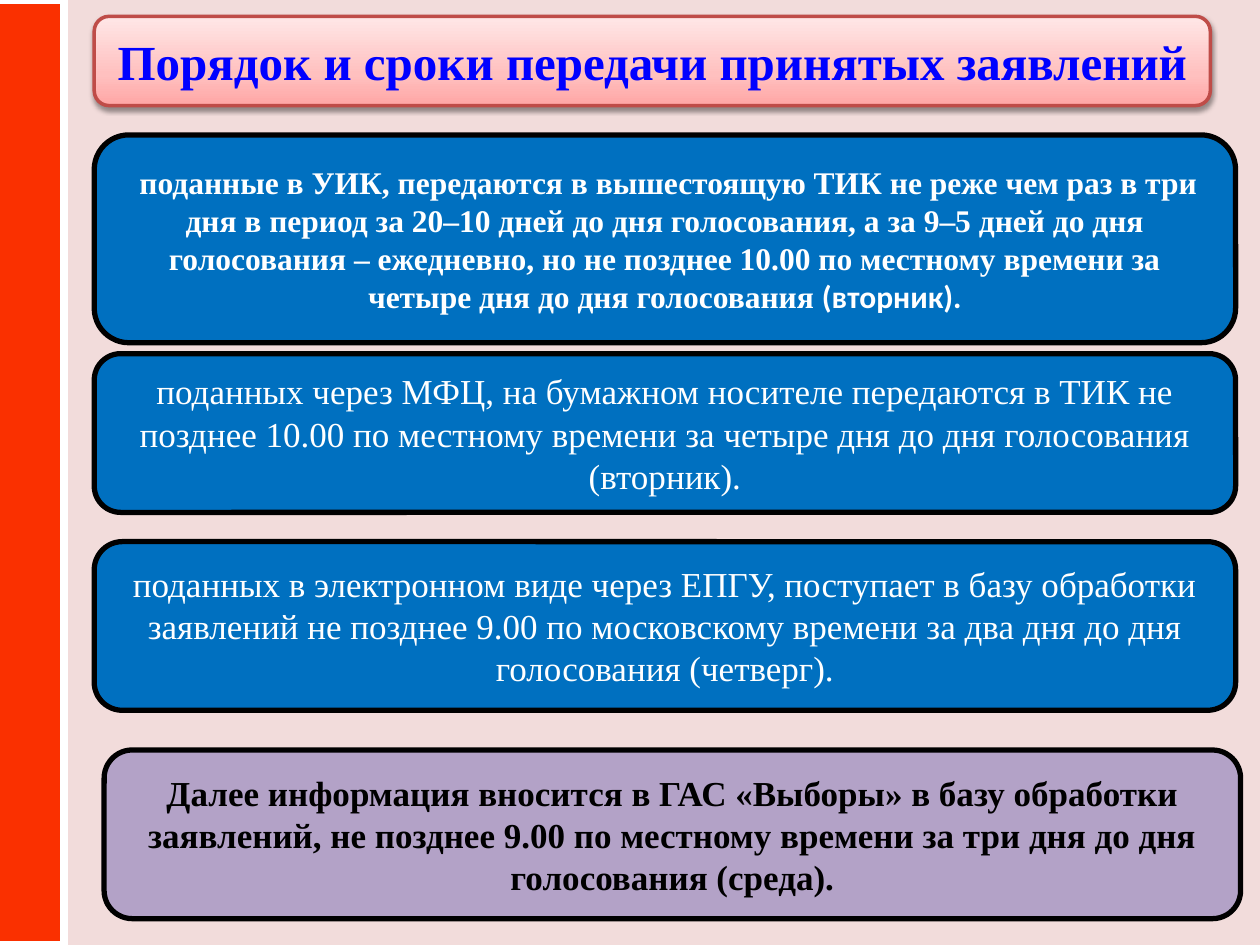
"""Build the slide on the order and deadlines for passing on accepted applications."""
from lxml import etree
from pptx import Presentation
from pptx.dml.color import RGBColor
from pptx.enum.shapes import MSO_SHAPE as SHAPE
from pptx.enum.text import MSO_ANCHOR as ANCHOR, PP_ALIGN as ALIGN
from pptx.oxml.ns import qn
from pptx.util import Cm, Pt

PINK = RGBColor(0xF2, 0xDC, 0xDB)
RED = RGBColor(0xFA, 0x30, 0x00)
BRICK = RGBColor(0xBF, 0x4C, 0x48)
BLUE = RGBColor(0x00, 0x70, 0xC0)
TITLE_BLUE = RGBColor(0x00, 0x00, 0xFF)
LILAC = RGBColor(0xB3, 0xA2, 0xC7)
WHITE = RGBColor(0xFF, 0xFF, 0xFF)
BLACK = RGBColor(0x00, 0x00, 0x00)
SERIF, SANS = "Times New Roman", "Calibri"
TITLE_STOPS = [(0, "FFA6A5"), (35000, "FFC0BF"), (100000, "FFE7E7")]


def add_panel(preset, left, top, width, height, fill, line, line_width):
    panel = slide.shapes.add_shape(preset, Cm(left), Cm(top), Cm(width), Cm(height))
    panel.shadow.inherit = False
    panel.fill.solid()
    panel.fill.fore_color.rgb = fill
    panel.line.color.rgb = line
    panel.line.width = Pt(line_width)
    return panel


def add_text(panel, runs, size, color, bold):
    frame = panel.text_frame
    frame.word_wrap = True
    frame.vertical_anchor = ANCHOR.MIDDLE
    paragraph = frame.paragraphs[0]
    paragraph.alignment = ALIGN.CENTER
    for words, font_name in runs:
        run = paragraph.add_run()
        run.text = words
        run.font.name = font_name
        run.font.size = Pt(size)
        run.font.bold = bold
        run.font.color.rgb = color


deck = Presentation()
deck.slide_width, deck.slide_height = Cm(25.4), Cm(19.05)
slide = deck.slides.add_slide(deck.slide_layouts[6])
slide.background.fill.solid()
slide.background.fill.fore_color.rgb = PINK

title = add_panel(SHAPE.ROUNDED_RECTANGLE, 1.9, 0.33, 22.5, 1.8, PINK, BRICK, 2)
title.fill.gradient()
title.fill.gradient_angle = 90
stop_list = title._element.spPr.find(qn("a:gradFill")).find(qn("a:gsLst"))
for stop in list(stop_list):
    stop_list.remove(stop)
for position, shade in TITLE_STOPS:
    stop = etree.SubElement(stop_list, qn("a:gs"), pos=str(position))
    etree.SubElement(stop, qn("a:srgbClr"), val=shade)
effects = title._element.spPr.find(qn("a:effectLst"))
shadow = etree.SubElement(effects, qn("a:outerShdw"), blurRad=str(Pt(3.1)),
                          dist=str(Pt(1.6)), dir="5400000", rotWithShape="0")
shadow_color = etree.SubElement(shadow, qn("a:srgbClr"), val="000000")
etree.SubElement(shadow_color, qn("a:alpha"), val="38000")
add_text(title, [("Порядок и сроки передачи принятых заявлений", SERIF)], 28, TITLE_BLUE, True)

deadlines = [
    (1.9, 2.72, 23.01, 4.19, BLUE, WHITE, 18, True, [
        (" ", SANS),
        ("поданные в УИК, передаются в вышестоящую ТИК не реже чем раз в три дня "
         "в период за 20–10 дней до дня голосования, а за 9–5 дней до дня голосования – "
         "ежедневно, но не позднее 10.00 по местному времени за четыре дня "
         "до дня голосования ", SERIF),
        ("(вторник).", SANS)]),
    (1.9, 7.13, 23.01, 3.2, BLUE, WHITE, 20, False, [
        ("поданных через МФЦ, на бумажном носителе передаются в ТИК не позднее 10.00 "
         "по местному времени за четыре дня до дня голосования (вторник).", SERIF)]),
    (1.9, 10.92, 23.01, 3.4, BLUE, WHITE, 20, False, [
        ("поданных в электронном виде через ЕПГУ, поступает в базу обработки заявлений "
         "не позднее 9.00 по московскому времени за два дня до дня голосования (четверг).",
         SERIF)]),
    (2.1, 15.12, 22.91, 3.4, LILAC, BLACK, 20, True, [
        ("Далее информация вносится в ГАС «Выборы» в базу обработки заявлений, "
         "не позднее 9.00 по местному времени за три дня до дня голосования (среда).",
         SERIF)]),
]
for left, top, width, height, fill, color, size, bold, runs in deadlines:
    deadline = add_panel(SHAPE.ROUNDED_RECTANGLE, left, top, width, height, fill, BLACK, 3)
    add_text(deadline, runs, size, color, bold)

add_panel(SHAPE.RECTANGLE, -0.3, 0, 1.6, 19.05, RED, WHITE, 4.5)

deck.save("out.pptx")
